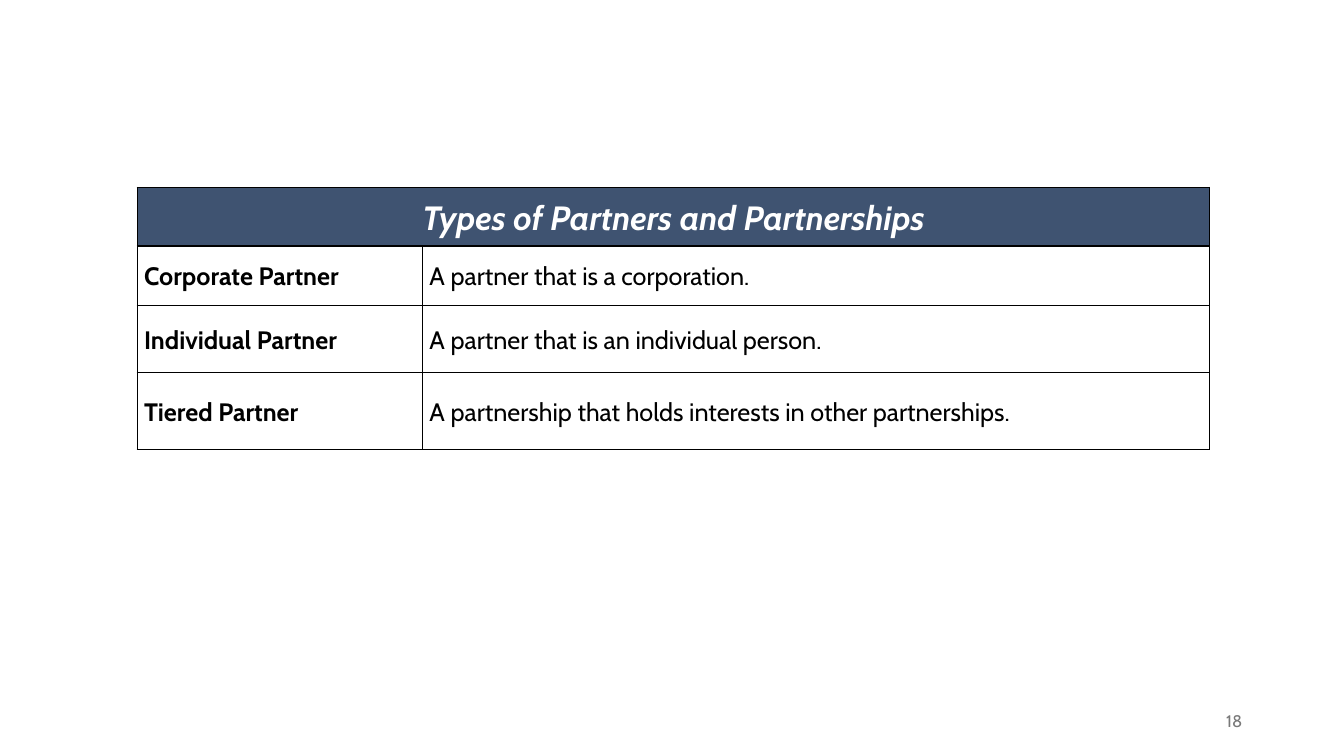
from lxml import etree
from pptx import Presentation
from pptx.dml.color import RGBColor
from pptx.enum import text
from pptx.oxml import ns
from pptx.util import Inches, Pt

NAVY = RGBColor(0x3F, 0x53, 0x71)
WHITE = RGBColor(0xFF, 0xFF, 0xFF)
BLACK = RGBColor(0x00, 0x00, 0x00)
GREY = RGBColor(0x79, 0x79, 0x79)
FONT = "Cabin"


def add_run(paragraph, wording, size, color, bold=False, italic=False):
    run = paragraph.add_run()
    run.text = wording
    run.font.name = FONT
    run.font.size = Pt(size)
    run.font.color.rgb = color
    run.font.bold = bold
    run.font.italic = italic


def add_borders(cell):
    properties = cell._tc.get_or_add_tcPr()
    for side in ("lnL", "lnR", "lnT", "lnB"):
        line = etree.SubElement(properties, ns.qn(f"a:{side}"), w=str(Pt(1)))
        fill = etree.SubElement(line, ns.qn("a:solidFill"))
        etree.SubElement(fill, ns.qn("a:srgbClr"), val=str(BLACK))


presentation = Presentation()
presentation.slide_width = Inches(13.33)
presentation.slide_height = Inches(7.5)
slide = presentation.slides.add_slide(presentation.slide_layouts[6])

heading = "Types of Partners and Partnerships"
definitions = [
    ("Corporate Partner", "A partner that is a corporation."),
    ("Individual Partner", "A partner that is an individual person."),
    ("Tiered Partner", "A partnership that holds interests in other partnerships."),
]
column_widths = [2.83, 7.81]
row_heights = [0.58, 0.59, 0.67, 0.76]

partners = slide.shapes.add_table(
    len(row_heights), len(column_widths),
    Inches(1.36), Inches(1.86), Inches(sum(column_widths)), Inches(sum(row_heights)),
).table
for column, width in zip(partners.columns, column_widths):
    column.width = Inches(width)
for row, height in zip(partners.rows, row_heights):
    row.height = Inches(height)
partners.cell(0, 0).merge(partners.cell(0, 1))

for row_index, entries in enumerate([(heading, ""), *definitions]):
    for column_index, wording in enumerate(entries):
        cell = partners.cell(row_index, column_index)
        add_borders(cell)
        cell.vertical_anchor = text.MSO_ANCHOR.MIDDLE
        cell.margin_left = cell.margin_right = Inches(0.07)
        cell.margin_top = cell.margin_bottom = 0
        if row_index == 0:
            cell.fill.solid()
            cell.fill.fore_color.rgb = NAVY
        else:
            cell.fill.background()
        if cell.is_spanned:
            continue
        paragraph = cell.text_frame.paragraphs[0]
        paragraph.line_spacing = 1.07
        paragraph.space_after = Pt(6)
        if row_index == 0:
            paragraph.alignment = text.PP_ALIGN.CENTER
            add_run(paragraph, wording, 24, WHITE, bold=True, italic=True)
        else:
            add_run(paragraph, wording, 18, BLACK, bold=column_index == 0)

page_number = slide.shapes.add_textbox(
    Inches(9.42), Inches(6.95), Inches(3), Inches(0.4)
).text_frame
page_number.word_wrap = True
page_number.vertical_anchor = text.MSO_ANCHOR.MIDDLE
page_number.paragraphs[0].alignment = text.PP_ALIGN.RIGHT
add_run(page_number.paragraphs[0], "18", 12, GREY)

presentation.save("out.pptx")
